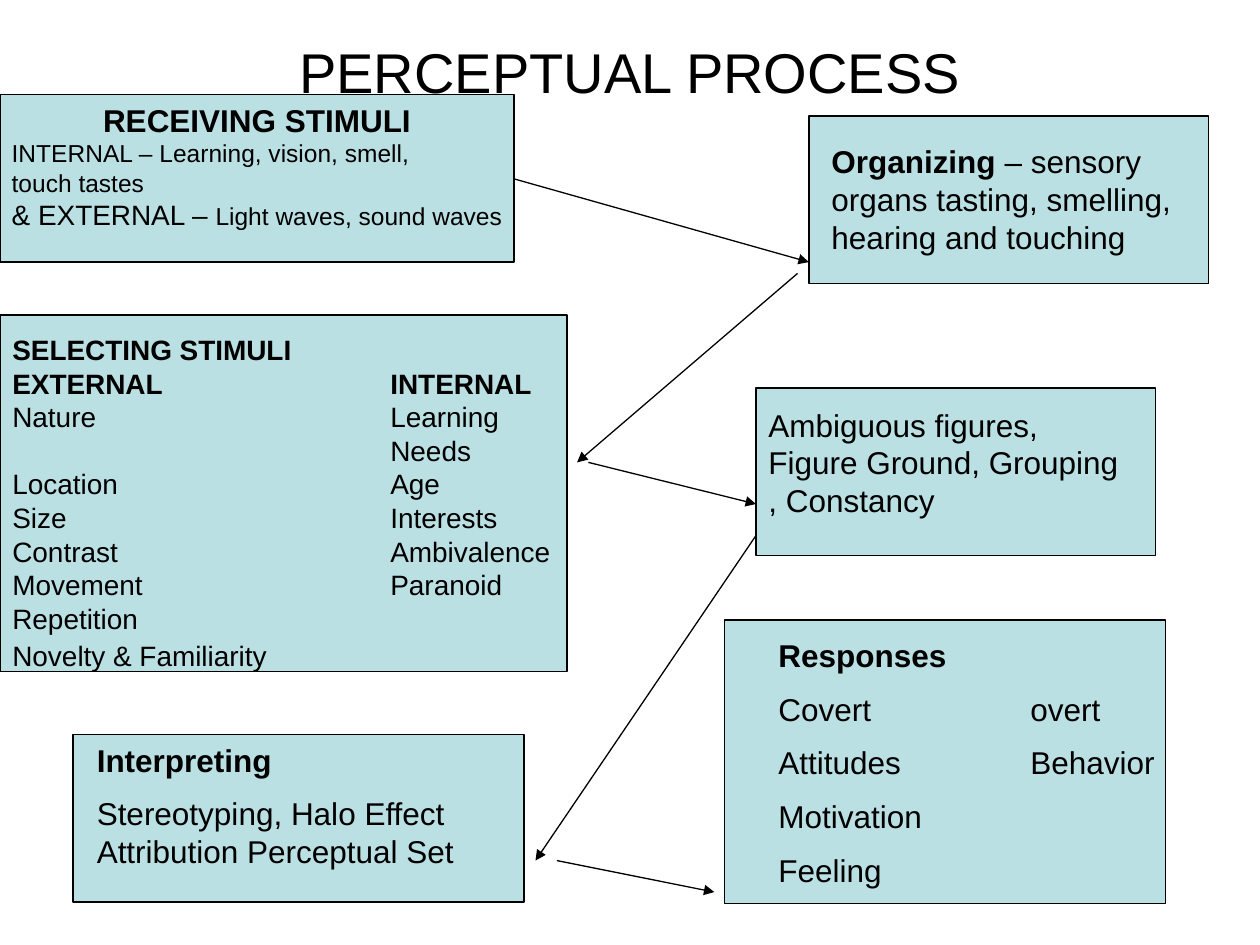
from collections import namedtuple

from lxml import etree
from pptx import Presentation
from pptx import util as u
from pptx.dml.color import RGBColor
from pptx.enum import shapes, text
from pptx.oxml import ns

Theme = namedtuple("Theme", "font ink fill rule title head body small gap")
THEME = Theme("Arial", RGBColor(0, 0, 0), RGBColor(0xBB, 0xE0, 0xE3),
              u.Pt(0.75), u.Pt(32), u.Pt(18), u.Pt(16), u.Pt(14), u.Pt(9))


def style(run, size, bold=False):
    font = run.font
    font.name, font.size, font.bold = THEME.font, size, bold
    font.color.rgb = THEME.ink


def write(frame, rows, gap=0, stop=None):
    frame.word_wrap = True
    frame.vertical_anchor = text.MSO_ANCHOR.TOP
    for i, runs in enumerate(rows):
        para = frame.add_paragraph() if i else frame.paragraphs[0]
        para.alignment = text.PP_ALIGN.LEFT
        para.space_before = gap if i else 0
        for words, size, bold in runs:
            run = para.add_run()
            run.text = words
            style(run, size, bold)
        if stop:
            tabs = etree.SubElement(para._p.get_or_add_pPr(), ns.qn("a:tabLst"))
            etree.SubElement(tabs, ns.qn("a:tab"), pos=str(u.Inches(stop)), algn="l")


def add_box(slide, *place):
    box = slide.shapes.add_shape(shapes.MSO_SHAPE.RECTANGLE, *map(u.Inches, place))
    box.shadow.inherit = False
    box.fill.solid()
    box.fill.fore_color.rgb = THEME.fill
    box.line.color.rgb = THEME.ink
    box.line.width = THEME.rule
    return box


def add_note(slide, place, rows, stop=None):
    note = slide.shapes.add_textbox(*map(u.Inches, place))
    write(note.text_frame, rows, THEME.gap, stop)


def add_arrow(slide, *ends):
    line = slide.shapes.add_connector(shapes.MSO_CONNECTOR.STRAIGHT, *map(u.Inches, ends))
    line.line.color.rgb = THEME.ink
    line.line.width = THEME.rule
    etree.SubElement(line.line._get_or_add_ln(), ns.qn("a:tailEnd"), type="triangle")
    etree.SubElement(line._element.spPr, ns.qn("a:effectLst"))


def add_title(slide, words):
    title = slide.shapes.title
    title.left, title.top, title.width, title.height = map(u.Inches, (0.5, 0.3, 9, 0.53))
    frame = title.text_frame
    frame.text = words
    frame.vertical_anchor = text.MSO_ANCHOR.MIDDLE
    frame.paragraphs[0].alignment = text.PP_ALIGN.CENTER
    style(frame.paragraphs[0].runs[0], THEME.title)


def add_stimuli(slide):
    head, body, small = THEME.head, THEME.body, THEME.small
    frame = add_box(slide, 0, 0.75, 4.08, 1.33).text_frame
    write(frame, [
        [("RECEIVING STIMULI", head, True)],
        [("INTERNAL – Learning, vision, smell,", small, False)],
        [("touch tastes", small, False)],
        [("& EXTERNAL – ", body, False), ("Light waves, sound waves", small, False)],
    ])
    frame.word_wrap = False
    frame.paragraphs[0].alignment = text.PP_ALIGN.CENTER


def add_choices(slide):
    frame = add_box(slide, 0, 2.5, 4.5, 2.83).text_frame
    frame.margin_top = u.Inches(0.14)
    heads = ["SELECTING STIMULI", "EXTERNAL\tINTERNAL"]
    items = ["Nature\tLearning", "\tNeeds", "Location\tAge", "Size\tInterests",
             "Contrast\tAmbivalence", "Movement\tParanoid", "Repetition",
             "Novelty & Familiarity"]
    rows = [[(row, THEME.body, row in heads)] for row in heads + items]
    write(frame, rows, stop=3)
    frame.paragraphs[-1].space_before = u.Pt(2)


def main():
    deck = Presentation()
    deck.slide_width, deck.slide_height = u.Inches(10), u.Inches(7.5)
    slide = deck.slides.add_slide(deck.slide_layouts[5])
    add_title(slide, "PERCEPTUAL PROCESS")
    add_stimuli(slide)
    add_box(slide, 6.42, 0.92, 3.17, 1.33)
    add_choices(slide)
    add_box(slide, 0.58, 5.83, 3.58, 1.33)
    add_box(slide, 5.75, 4.92, 3.5, 2.25)
    add_box(slide, 6, 3.08, 3.17, 1.33)

    size = THEME.head
    add_note(slide, (0.67, 5.83, 3.5, 1.15), [
        [("Interpreting", size, True)],
        [("Stereotyping, Halo Effect Attribution Perceptual Set", size, False)],
    ])
    add_note(slide, (6.5, 1.08, 2.92, 1), [
        [("Organizing ", size, True),
         ("– sensory organs tasting, smelling, hearing and touching", size, False)],
    ])
    add_note(slide, (6, 3.17, 3, 1), [
        [("Ambiguous figures, Figure Ground, Grouping , Constancy", size, False)],
    ])
    kinds = ["Covert\tovert", "Attitudes\tBehavior", "Motivation", "Feeling"]
    add_note(slide, (6.08, 5, 3.5, 2.21),
             [[("Responses", size, True)]] + [[(kind, size, False)] for kind in kinds],
             stop=2)

    for ends in [(4.08, 1.42, 6.42, 2.08), (6.33, 2.17, 4.58, 3.67),
                 (4.67, 3.67, 6, 4), (6, 4.25, 4.25, 6.83),
                 (4.42, 6.83, 5.67, 7.08)]:
        add_arrow(slide, *ends)
    deck.save("out.pptx")


if __name__ == "__main__":
    main()
